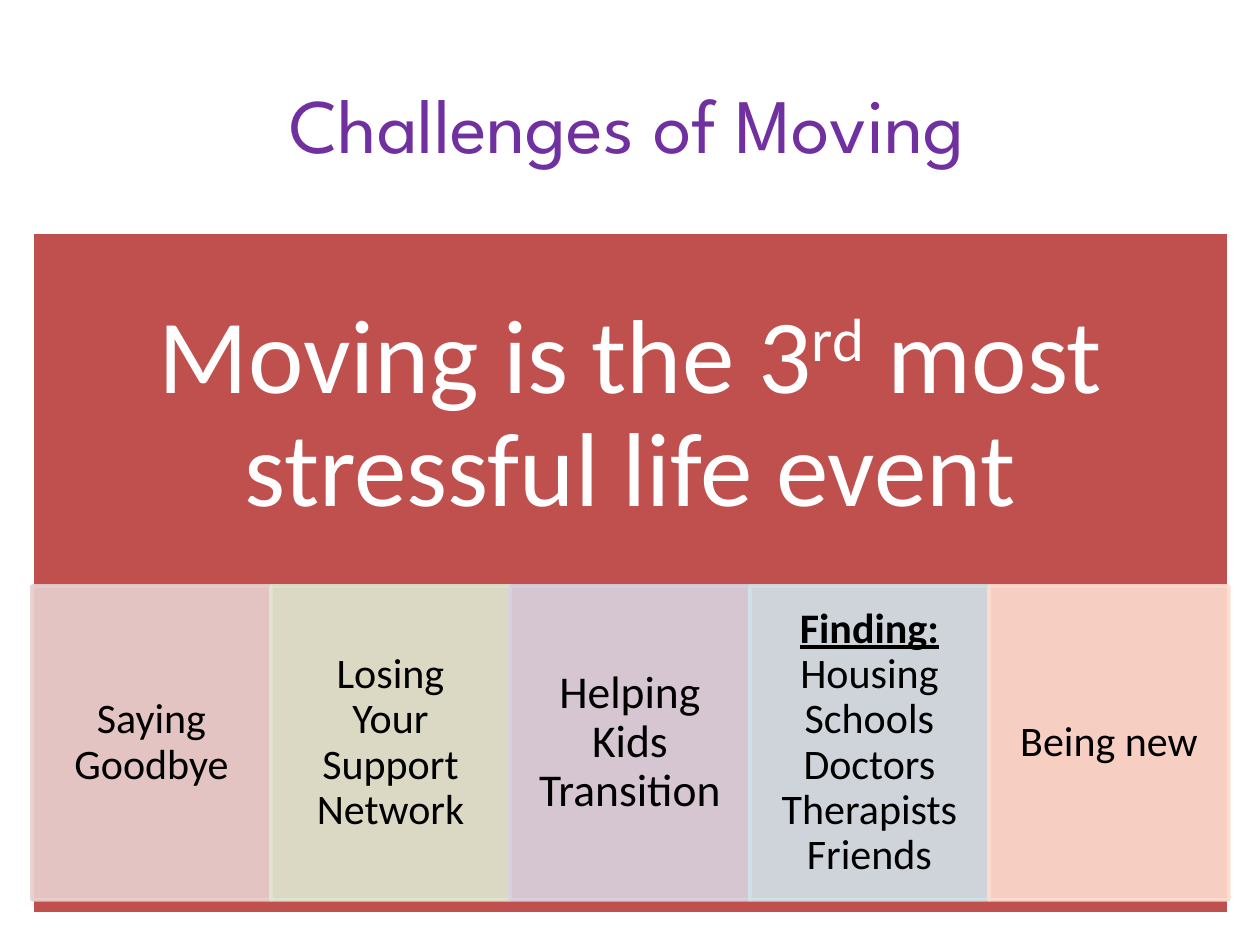
from lxml import etree
from pptx import Presentation
from pptx.dml.color import RGBColor
from pptx.enum.shapes import MSO_SHAPE
from pptx.enum.text import MSO_ANCHOR, PP_ALIGN
from pptx.oxml.ns import qn
from pptx.util import Emu, Pt

RECT = MSO_SHAPE.RECTANGLE
MIDDLE = MSO_ANCHOR.MIDDLE
CENTER = PP_ALIGN.CENTER
SCALE = 914400 // 126

LEFT, WIDTH = 32, 1197
CELLS = [
    ("Saying Goodbye", 24, "E8D0D0"),
    ("Losing Your Support Network", 24, "DEE7D1"),
    ("Helping Kids Transition", 26, "D8D3E0"),
    ("Finding:\vHousing Schools Doctors Therapists\vFriends", 24, "D0E3EA"),
    ("Being new", 24, "FCDDCF"),
]


def px(n):
    return Emu(n * SCALE)


def rgb(code):
    return RGBColor.from_string(code)


def fade(paint, percent):
    """Set the opacity of a solid fill."""
    color = paint.find(".//" + qn("a:srgbClr"))
    etree.SubElement(color, qn("a:alpha")).set("val", str(percent * 1000))


def add_box(slide, box, fill, line, opacity=100):
    shape = slide.shapes.add_shape(RECT, *map(px, box))
    shape.shadow.inherit = False
    shape.fill.solid()
    shape.fill.fore_color.rgb = rgb(fill)
    shape.line.color.rgb = rgb(line)
    shape.line.width = Pt(2)
    if opacity < 100:
        props = shape.element.spPr
        fade(props.find(qn("a:solidFill")), opacity)
        fade(props.find(qn("a:ln")), opacity)
    return shape


def style(para, size, color, font="Calibri", space=0.9):
    para.alignment = CENTER
    para.line_spacing = space
    for run in para.runs:
        run.font.size = Pt(size)
        run.font.name = font
        run.font.color.rgb = rgb(color)


def set_frame(shape, side, top):
    frame = shape.text_frame
    frame.word_wrap = True
    frame.vertical_anchor = MIDDLE
    frame.margin_left = frame.margin_right = px(side)
    frame.margin_top = frame.margin_bottom = px(top)
    return frame.paragraphs[0]


def add_text(slide, box, parts, size, color, inset, **look):
    shape = slide.shapes.add_textbox(*map(px, box))
    para = set_frame(shape, *inset)
    for part in parts:
        para.add_run().text = part
    style(para, size, color, **look)
    return para


def add_cell(slide, box, text, size, fill):
    shape = add_box(slide, box, fill, fill, 90)
    para = set_frame(shape, size, 4)
    para.text = text
    style(para, size, "000000")
    return para


def main():
    deck = Presentation()
    deck.slide_width, deck.slide_height = px(1260), px(945)
    slide = deck.slides.add_slide(deck.slide_layouts[6])

    # Title
    add_text(slide, (116, 21, 1023, 204), ["Challenges of Moving"], 44,
             "7030A0", (13, 6), font="League Spartan", space=1)

    # Red panel with its headline
    add_box(slide, (LEFT, 232, WIDTH, 682), "C0504D", "FFFFFF")
    head = add_text(slide, (LEFT, 232, WIDTH, 368),
                    ["Moving is the 3", "rd", " most stressful life event"],
                    60, "FFFFFF", (59, 59))
    head.runs[1].font._element.set("baseline", "30000")

    # Row of equal cells
    edges = [LEFT + WIDTH * i // len(CELLS) for i in range(len(CELLS) + 1)]
    paras = [
        add_cell(slide, (start, 586, end - start, 314), *cell)
        for start, end, cell in zip(edges, edges[1:], CELLS)
    ]
    lead = paras[3].runs[0].font
    lead.bold = lead.underline = True

    deck.save("out.pptx")


if __name__ == "__main__":
    main()
